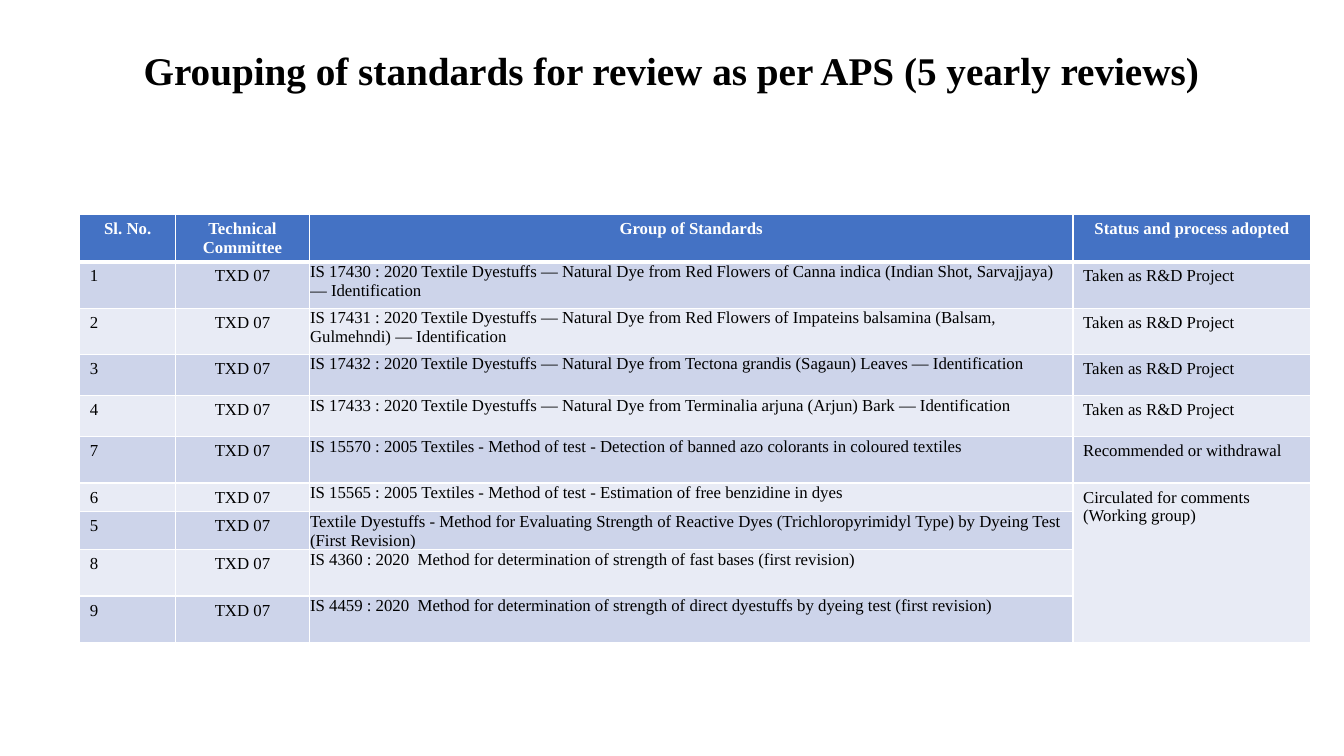
import pptx
import pptx.dml.color
import pptx.enum.text
import pptx.oxml
import pptx.oxml.ns
import pptx.util

Pt = pptx.util.Pt
RGBColor = pptx.dml.color.RGBColor
CENTER = pptx.enum.text.PP_ALIGN.CENTER
LEFT = pptx.enum.text.PP_ALIGN.LEFT

FONT = "Times New Roman"
BLACK = RGBColor(0x00, 0x00, 0x00)
WHITE = RGBColor(0xFF, 0xFF, 0xFF)
HEADER_BLUE = RGBColor(0x44, 0x72, 0xC4)
BAND_COLORS = [RGBColor(0xCD, 0xD4, 0xEA), RGBColor(0xE8, 0xEB, 0xF5)]

TITLE = "Grouping of standards for review as per APS (5 yearly reviews)"
HEADERS = ["Sl. No.", "Technical Committee", "Group of Standards", "Status and process adopted"]
COMMITTEE = "TXD 07"
RESEARCH = "Taken as R&D Project"
# Serial number, standard, status (empty when it continues from above), row height
STANDARDS = [
    ("1", "IS 17430 : 2020 Textile Dyestuffs — Natural Dye from Red Flowers of Canna indica "
          "(Indian Shot, Sarvajjaya) — Identification", RESEARCH, 33),
    ("2", "IS 17431 : 2020 Textile Dyestuffs — Natural Dye from Red Flowers of Impateins balsamina "
          "(Balsam, Gulmehndi) — Identification", RESEARCH, 33),
    ("3", "IS 17432 : 2020 Textile Dyestuffs — Natural Dye from Tectona grandis (Sagaun) Leaves "
          "— Identification", RESEARCH, 29.5),
    ("4", "IS 17433 : 2020 Textile Dyestuffs — Natural Dye from Terminalia arjuna (Arjun) Bark "
          "— Identification", RESEARCH, 29.5),
    ("7", "IS 15570 : 2005 Textiles - Method of test - Detection of banned azo colorants in "
          "coloured textiles", "Recommended or withdrawal", 33),
    ("6", "IS 15565 : 2005 Textiles - Method of test - Estimation of free benzidine in dyes",
     "Circulated for comments (Working group)", 20.5),
    ("5", "Textile Dyestuffs - Method for Evaluating Strength of Reactive Dyes (Trichloropyrimidyl "
          "Type) by Dyeing Test (First Revision)", "", 27),
    ("8", "IS 4360 : 2020  Method for determination of strength of fast bases (first revision)", "", 33),
    ("9", "IS 4459 : 2020  Method for determination of strength of direct dyestuffs by dyeing test "
          "(first revision)", "", 33),
]
HEADER_HEIGHT = 33.5
COLUMN_WIDTHS = [68.5, 95.5, 545.5, 170]
STANDARD_COLUMN, STATUS_COLUMN = 2, 3


def format_paragraph(paragraph, size, color, bold, alignment):
    paragraph.alignment = alignment
    for run in paragraph.runs:
        run.font.name = FONT
        run.font.size = Pt(size)
        run.font.bold = bold
        run.font.color.rgb = color


def set_borders(cell, bottom_width):
    """Draw white lines on all four sides; they must precede the fill."""
    properties = cell._tc.get_or_add_tcPr()
    widths = {"lnL": 1, "lnR": 1, "lnT": 1, "lnB": bottom_width}
    for index, (side, width) in enumerate(widths.items()):
        line = pptx.oxml.parse_xml(
            f'<a:{side} {pptx.oxml.ns.nsdecls("a")} w="{Pt(width)}"><a:solidFill>'
            f'<a:srgbClr val="{WHITE}"/></a:solidFill></a:{side}>')
        properties.insert(index, line)


def fill_cell(cell, text, fill, color, bold, alignment, margins, bottom_width):
    cell.margin_left, cell.margin_top, cell.margin_right, cell.margin_bottom = map(Pt, margins)
    cell.fill.solid()
    cell.fill.fore_color.rgb = fill
    set_borders(cell, bottom_width)
    cell.text_frame.text = text
    format_paragraph(cell.text_frame.paragraphs[0], 12, color, bold, alignment)


def add_title(slide, left, top, width, height):
    title = slide.shapes.title
    title.left, title.top, title.width, title.height = map(Pt, (left, top, width, height))
    frame = title.text_frame
    frame.text = TITLE
    frame.auto_size = pptx.enum.text.MSO_AUTO_SIZE.NONE
    frame.vertical_anchor = pptx.enum.text.MSO_ANCHOR.BOTTOM
    frame.paragraphs[0].line_spacing = 0.9
    format_paragraph(frame.paragraphs[0], 28, BLACK, True, CENTER)


def add_standards_table(slide, left, top):
    heights = [HEADER_HEIGHT] + [height for *_, height in STANDARDS]
    table = slide.shapes.add_table(
        len(heights), len(HEADERS), Pt(left), Pt(top),
        Pt(sum(COLUMN_WIDTHS)), Pt(sum(heights))).table
    for column, width in zip(table.columns, COLUMN_WIDTHS):
        column.width = Pt(width)
    for row, height in zip(table.rows, heights):
        row.height = Pt(height)

    # Header row
    normal_margins, tight_margins = (7.2, 3.6, 7.2, 3.6), (0.5, 0.5, 0.5, 0)
    for column, text in enumerate(HEADERS):
        fill_cell(table.cell(0, column), text, HEADER_BLUE, WHITE, True, CENTER, normal_margins, 3)

    # Banded body rows
    for row, (number, standard, status, _) in enumerate(STANDARDS, start=1):
        fill = BAND_COLORS[(row - 1) % 2]
        for column, text in enumerate([number, COMMITTEE, standard, status]):
            tight = column == STANDARD_COLUMN or not text
            fill_cell(table.cell(row, column), text, fill, BLACK, False,
                      CENTER if text == COMMITTEE else LEFT,
                      tight_margins if tight else normal_margins, 1)

    # One status shared by the last rows
    first_shared = max(row for row, entry in enumerate(STANDARDS, start=1) if entry[2])
    table.cell(first_shared, STATUS_COLUMN).merge(table.cell(len(STANDARDS), STATUS_COLUMN))


def main():
    presentation = pptx.Presentation()
    presentation.slide_width, presentation.slide_height = Pt(960), Pt(540)
    slide = presentation.slides.add_slide(presentation.slide_layouts[5])
    add_title(slide, 65.5, 12.25, 828, 58.5)
    add_standards_table(slide, 57, 153.25)
    presentation.save("out.pptx")


if __name__ == "__main__":
    main()
